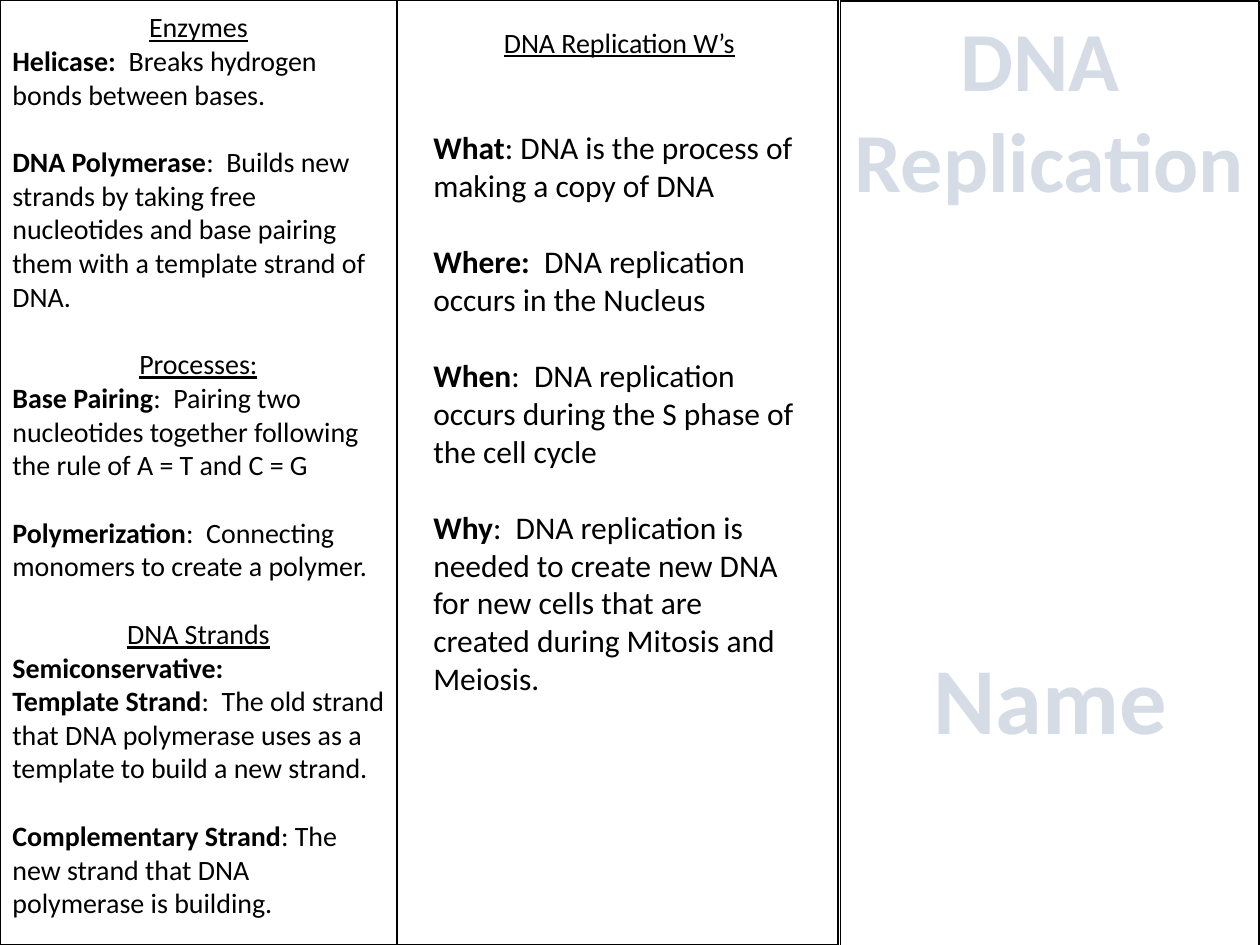
from dataclasses import dataclass

from pptx import Presentation
from pptx.dml.color import RGBColor
from pptx.enum.shapes import MSO_SHAPE
from pptx.enum.text import MSO_ANCHOR, MSO_AUTO_SIZE, PP_ALIGN
from pptx.util import Inches, Pt

RECTANGLE = MSO_SHAPE.RECTANGLE
TOP = MSO_ANCHOR.TOP
NO_AUTOFIT = MSO_AUTO_SIZE.NONE
CENTER, LEFT = PP_ALIGN.CENTER, PP_ALIGN.LEFT

WHITE = RGBColor(0xFF, 0xFF, 0xFF)
BLACK = RGBColor(0x00, 0x00, 0x00)
PALE_BLUE = RGBColor(0xD6, 0xDC, 0xE5)

FONT = "Calibri"
LINE_HEIGHT = 1.22  # Calibri line pitch as a share of the font size
SLIDE_WIDTH, SLIDE_HEIGHT = Inches(10), Inches(7.5)
TITLE_ONLY_LAYOUT = 5


@dataclass(frozen=True)
class Box:
    """A rectangle in percent of the slide's width and height."""
    left: float
    top: float
    width: float
    height: float

    def lengths(self) -> tuple[int, int, int, int]:
        return (int(SLIDE_WIDTH * self.left / 100), int(SLIDE_HEIGHT * self.top / 100),
                int(SLIDE_WIDTH * self.width / 100), int(SLIDE_HEIGHT * self.height / 100))


@dataclass(frozen=True)
class Heading:
    text: str
    size: int = 16
    lines_before: int = 0


@dataclass(frozen=True)
class Entry:
    """A bold term followed by its plain explanation."""
    term: str
    explanation: str = ""
    size: int = 16
    lines_before: float = 1


PANELS = [
    Box(0, 0, 31.5, 100),
    Box(31.5, 0, 35, 100),
    Box(66.7, 0.1, 33.2, 100),
]
VOCABULARY_BOX = Box(0, 0.4, 31.5, 98)
QUESTIONS_BOX = Box(33.4, 2, 31.5, 88.8)
TITLE_BOX = Box(66.7, 0.1, 33.2, 22.9)
NAME_BOX = Box(73, 67.1, 20.7, 13.5)

VOCABULARY = [
    Heading("Enzymes"),
    Entry("Helicase:", "  Breaks hydrogen bonds between bases.", lines_before=0),
    Entry("DNA Polymerase", ":  Builds new strands by taking free nucleotides and "
          "base pairing them with a template strand of DNA."),
    Heading("Processes:", lines_before=1),
    Entry("Base Pairing", ":  Pairing two nucleotides together following the rule "
          "of A = T and C = G", lines_before=0),
    Entry("Polymerization", ":  Connecting monomers to create a polymer."),
    Heading("DNA Strands", lines_before=1),
    Entry("Semiconservative:", lines_before=0),
    Entry("Template Strand", ":  The old strand that DNA polymerase uses as a "
          "template to build a new strand.", lines_before=0),
    Entry("Complementary Strand", ": The new strand that DNA polymerase is building."),
]
QUESTIONS = [
    Heading("DNA Replication W’s"),
    Entry("What", ": DNA is the process of making a copy of DNA", 18, 1.8),
    Entry("Where:", "  DNA replication occurs in the Nucleus", 18),
    Entry("When", ":  DNA replication occurs during the S phase of the cell cycle", 18),
    Entry("Why", ":  DNA replication is needed to create new DNA for new cells that "
          "are created during Mitosis and Meiosis.", 18),
]


def add_run(paragraph, text: str, size: int, color: RGBColor = BLACK,
            bold: bool = False, underline: bool = False) -> None:
    run = paragraph.add_run()
    run.text = text
    run.font.name = FONT
    run.font.size = Pt(size)
    run.font.bold = bold
    run.font.underline = underline
    run.font.color.rgb = color


def add_panel(slide, box: Box) -> None:
    panel = slide.shapes.add_shape(RECTANGLE, *box.lengths())
    panel.shadow.inherit = False
    panel.fill.solid()
    panel.fill.fore_color.rgb = WHITE
    panel.line.color.rgb = BLACK
    panel.line.width = Pt(1)


def add_column(slide, box: Box, items: list[Heading | Entry]) -> None:
    frame = slide.shapes.add_textbox(*box.lengths()).text_frame
    frame.word_wrap = True
    for index, item in enumerate(items):
        paragraph = frame.add_paragraph() if index else frame.paragraphs[0]
        paragraph.space_before = Pt(round(item.lines_before * item.size * LINE_HEIGHT, 1))
        if isinstance(item, Heading):
            paragraph.alignment = CENTER
            add_run(paragraph, item.text, item.size, underline=True)
        else:
            paragraph.alignment = LEFT
            add_run(paragraph, item.term, item.size, bold=True)
            if item.explanation:
                add_run(paragraph, item.explanation, item.size)


def write_cover_lines(frame, lines: list[str], size: int) -> None:
    for index, line in enumerate(lines):
        paragraph = frame.add_paragraph() if index else frame.paragraphs[0]
        paragraph.alignment = CENTER
        add_run(paragraph, line, size, PALE_BLUE, bold=True)


def place_title(slide) -> None:
    """Move the title placeholder onto the cover panel, in front of it."""
    title = slide.shapes.title
    title.left, title.top, title.width, title.height = TITLE_BOX.lengths()
    frame = title.text_frame
    frame.auto_size = NO_AUTOFIT
    frame.vertical_anchor = TOP
    frame.word_wrap = True
    write_cover_lines(frame, ["DNA ", "Replication"], 48)
    slide.shapes.element.append(title.element)


def main() -> None:
    presentation = Presentation()
    presentation.slide_width, presentation.slide_height = SLIDE_WIDTH, SLIDE_HEIGHT
    slide = presentation.slides.add_slide(presentation.slide_layouts[TITLE_ONLY_LAYOUT])

    for panel in PANELS:
        add_panel(slide, panel)
    add_column(slide, VOCABULARY_BOX, VOCABULARY)
    add_column(slide, QUESTIONS_BOX, QUESTIONS)
    place_title(slide)
    name_frame = slide.shapes.add_textbox(*NAME_BOX.lengths()).text_frame
    name_frame.word_wrap = False
    write_cover_lines(name_frame, ["Name"], 54)

    presentation.save("out.pptx")


if __name__ == "__main__":
    main()
